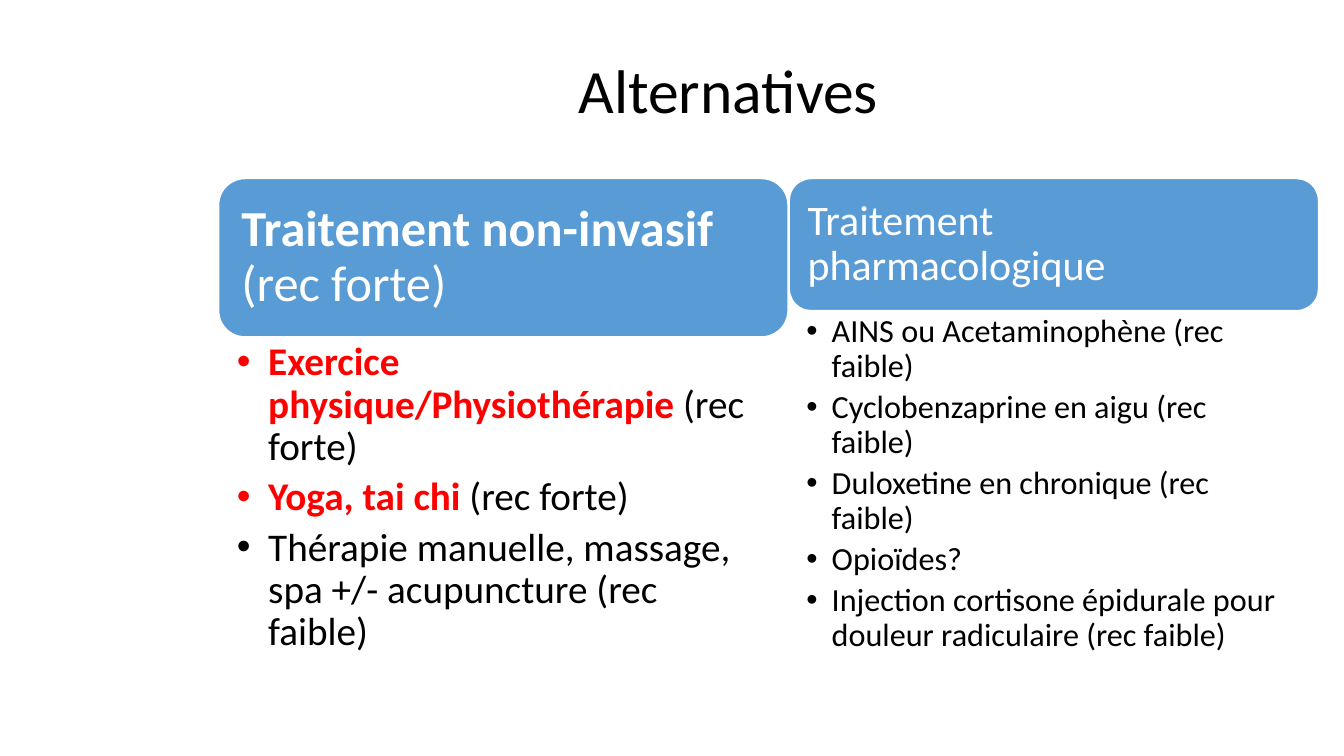
import pptx
import pptx.util
import pptx.dml.color
import pptx.enum.shapes
import pptx.enum.text
import pptx.oxml.ns
from lxml import etree

Cm = pptx.util.Cm
Pt = pptx.util.Pt
RGBColor = pptx.dml.color.RGBColor
Anchor = pptx.enum.text.MSO_ANCHOR
Align = pptx.enum.text.PP_ALIGN

BLUE = RGBColor(0x59, 0x9B, 0xD5)
WHITE = RGBColor(255, 255, 255)
BLACK = RGBColor(0, 0, 0)
RED = RGBColor(255, 0, 0)
BASE = 16.97

LEFT = dict(
    head=[("Traitement non-invasif ", True), ("(rec forte)", False)],
    items=[
        [("Exercice physique/Physiothérapie", True), (" (rec forte)", False)],
        [("Yoga, tai chi ", True), ("(rec forte)", False)],
        [("Thérapie manuelle, massage, spa +/- acupuncture (rec faible)", False)],
    ],
    tall=3.99, big=36, size=28, pad=0.38, hang=0.79, ins=(0.46, 0.13, 0.71, 0.13),
)
RIGHT = dict(
    head=[("Traitement pharmacologique", False)],
    items=[
        [("AINS ou Acetaminophène (rec faible)", False)],
        [("Cyclobenzaprine en aigu (rec faible)", False)],
        [("Duloxetine en chronique (rec faible)", False)],
        [("Opioïdes?", False)],
        [("Injection cortisone épidurale pour douleur radiculaire (rec faible)", False)],
    ],
    tall=3.33, big=30, size=23, pad=0.3, hang=0.64, ins=(0.43, 0.1, 0.58, 0.1),
)


def place(shape, x, y, w, h):
    """Move a shape to a box given in centimetres."""
    shape.left, shape.top, shape.width, shape.height = map(Cm, (x, y, w, h))


def frame(shape, ins, anchor):
    """Set the insets and anchor of a shape and return its text frame."""
    text = shape.text_frame
    text.word_wrap = True
    text.auto_size = pptx.enum.text.MSO_AUTO_SIZE.NONE
    text.vertical_anchor = anchor
    text.margin_left, text.margin_top, text.margin_right, text.margin_bottom = map(Cm, ins)
    return text


def bullet(para, hang, color):
    """Give a paragraph a hanging bullet."""
    para.level = 1
    props = para._p.get_or_add_pPr()
    props.set("marL", str(Cm(hang)))
    props.set("indent", str(-Cm(hang)))
    qn = pptx.oxml.ns.qn
    tint = etree.SubElement(props, qn("a:buClr"))
    etree.SubElement(tint, qn("a:srgbClr"), val=str(color))
    etree.SubElement(props, qn("a:buFont"), typeface="Arial")
    etree.SubElement(props, qn("a:buChar"), char="•")


def write(para, runs, size, color=BLACK, strong=None, align=Align.LEFT, before=0):
    """Fill a paragraph with (text, bold) runs; bold ones take the strong colour."""
    para.alignment = align
    para.line_spacing = 0.9
    para.space_before = Pt(before)
    para.space_after = Pt(0)
    for words, bold in runs:
        run = para.add_run()
        run.text = words
        run.font.name = "Calibri"
        run.font.size = Pt(size)
        run.font.bold = bold
        run.font.color.rgb = strong if bold and strong else color


def title(slide, x, y, w, h):
    """Place the slide title."""
    shape = slide.shapes.title
    place(shape, x, y, w, h)
    text = frame(shape, (0.25, 0.13, 0.25, 0.13), Anchor.MIDDLE)
    write(text.paragraphs[0], [("Alternatives", False)], 44, align=Align.CENTER)


def header(slide, x, y, w, data):
    """Draw the rounded heading of a column."""
    kind = pptx.enum.shapes.MSO_SHAPE.ROUNDED_RECTANGLE
    shape = slide.shapes.add_shape(kind, Cm(x), Cm(y), Cm(w), Cm(data["tall"]))
    shape.shadow.inherit = False
    shape.fill.solid()
    shape.fill.fore_color.rgb = BLUE
    shape.line.color.rgb = WHITE
    shape.line.width = Pt(1)
    text = frame(shape, [data["pad"]] * 4, Anchor.MIDDLE)
    write(text.paragraphs[0], data["head"], data["big"], WHITE)


def column(slide, body, x, y, w, data):
    """Place a heading with its bullet list below."""
    header(slide, x, y, w, data)
    top = y + data["tall"]
    place(body, x, top, w, BASE - top)
    text = frame(body, data["ins"], Anchor.TOP)
    for i, runs in enumerate(data["items"]):
        para = text.add_paragraph() if i else text.paragraphs[0]
        bullet(para, data["hang"], RED if runs[0][1] else BLACK)
        write(para, runs, data["size"], strong=RED, before=data["size"] / 5 if i else 0)


def main():
    """Build and save the slide."""
    deck = pptx.Presentation()
    deck.slide_width, deck.slide_height = Cm(33.87), Cm(19.05)
    slide = deck.slides.add_slide(deck.slide_layouts[3])
    title(slide, 14.12, 0.76, 8.48, 3.18)
    column(slide, slide.placeholders[1], 5.51, 4.5, 14.35, LEFT)
    column(slide, slide.placeholders[2], 19.89, 4.5, 13.34, RIGHT)
    deck.save("out.pptx")


if __name__ == "__main__":
    main()
